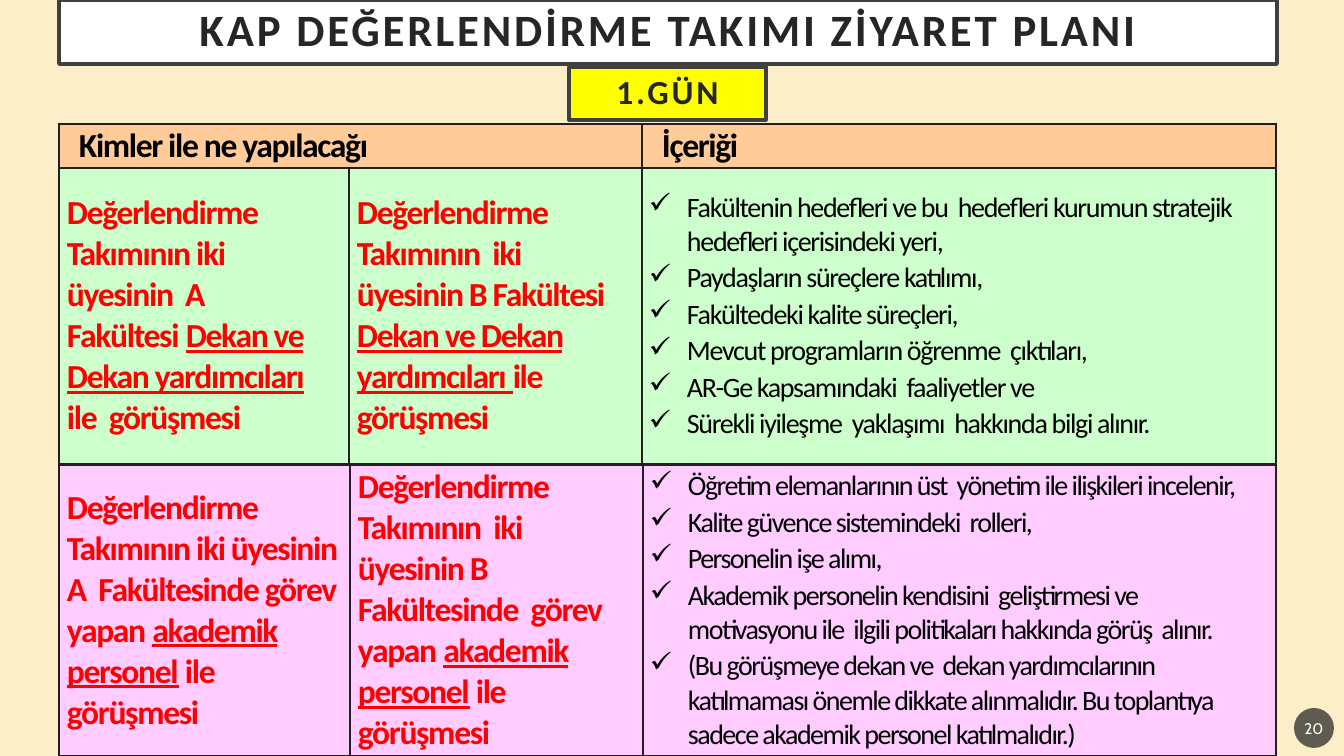
"""Builds the first-day visit plan slide of the evaluation team."""
from dataclasses import dataclass

from lxml import etree
from pptx import Presentation
from pptx.dml.color import RGBColor
from pptx.enum.shapes import MSO_SHAPE
from pptx.enum.text import MSO_ANCHOR, MSO_AUTO_SIZE, PP_ALIGN
from pptx.oxml.ns import qn
from pptx.util import Pt

EMU_PER_PX = 914400 / 100.8
RECT, OVAL = MSO_SHAPE.RECTANGLE, MSO_SHAPE.OVAL
MIDDLE, CENTER = MSO_ANCHOR.MIDDLE, PP_ALIGN.CENTER
NO_FIT = MSO_AUTO_SIZE.NONE
TITLE_ONLY = 5


@dataclass(frozen=True)
class Theme:
    font: str = "Calibri"
    number_font: str = "Cabin"
    page: str = "FBEEC9"
    white: str = "FFFFFF"
    yellow: str = "FFFF00"
    frame: str = "404040"
    heading: str = "262626"
    badge: str = "1D1D1D"
    grid: str = "231F20"
    black: str = "000000"
    red: str = "FF0000"
    orange: str = "FFCC99"
    green: str = "CCFFCC"
    pink: str = "FFCCFF"
    title_size: int = 32
    label_size: int = 24
    list_size: int = 20
    number_size: int = 11
    wide: int = 200
    tight: int = -95
    tighter: int = -110


def px(n):
    return round(n * EMU_PER_PX)


def rgb(code):
    return RGBColor.from_string(code)


class SlideBuilder:
    """Holds the theme and the current slide."""

    def __init__(self, prs, theme):
        self.theme = theme
        self.slide = prs.slides.add_slide(prs.slide_layouts[TITLE_ONLY])
        self.slide.background.fill.solid()
        self.slide.background.fill.fore_color.rgb = rgb(theme.page)

    def style(self, p, size, color, bold=True, spacing=0, font=None):
        for r in p.runs:
            r.font.name = font or self.theme.font
            r.font.size = Pt(size)
            r.font.bold = bold
            r.font.color.rgb = rgb(color)
            r._r.get_or_add_rPr().set("spc", str(spacing))

    def center(self, sp, text):
        tf = sp.text_frame
        tf.text = text
        tf.word_wrap = True
        tf.auto_size = NO_FIT
        tf.vertical_anchor = MIDDLE
        tf.margin_left = tf.margin_right = px(2)
        tf.margin_top = tf.margin_bottom = 0
        p = tf.paragraphs[0]
        p.alignment = CENTER
        return p

    def banner(self, sp, box, text, fill, size):
        sp.left, sp.top, sp.width, sp.height = map(px, box)
        sp.fill.solid()
        sp.fill.fore_color.rgb = rgb(fill)
        sp.line.color.rgb = rgb(self.theme.frame)
        sp.line.width = Pt(2.5)
        p = self.center(sp, text)
        p.line_spacing = 0.9
        self.style(p, size, self.theme.heading, spacing=self.theme.wide)

    def title(self, box, text):
        self.banner(self.slide.shapes.title, box, text, self.theme.white, self.theme.title_size)

    def shape(self, kind, box):
        sp = self.slide.shapes.add_shape(kind, *map(px, box))
        sp.shadow.inherit = False
        return sp

    def day_label(self, box, text):
        self.banner(self.shape(RECT, box), box, text, self.theme.yellow, self.theme.label_size)

    def page_number(self, box, text):
        sp = self.shape(OVAL, box)
        sp.fill.solid()
        sp.fill.fore_color.rgb = rgb(self.theme.badge)
        color = sp._element.spPr.find(".//" + qn("a:srgbClr"))
        etree.SubElement(color, qn("a:alpha"), val="70000")
        sp.line.fill.background()
        self.style(self.center(sp, text), self.theme.number_size, self.theme.white,
                   bold=False, font=self.theme.number_font)

    def table(self, left, top, height, widths, fill):
        frame = self.slide.shapes.add_table(
            1, len(widths), px(left), px(top), px(sum(widths)), px(height))
        table = frame.table
        table.first_row = table.horz_banding = False
        table.rows[0].height = px(height)
        for column, width in zip(table.columns, widths):
            column.width = px(width)
        for cell in table.iter_cells():
            self.grid(cell)
            cell.fill.solid()
            cell.fill.fore_color.rgb = rgb(fill)
            cell.vertical_anchor = MIDDLE
            cell.margin_top = cell.margin_bottom = 0
        return list(table.iter_cells())

    def grid(self, cell):
        tc_pr = cell._tc.get_or_add_tcPr()
        for side in ("a:lnL", "a:lnR", "a:lnT", "a:lnB"):
            ln = etree.SubElement(tc_pr, qn(side), w=str(Pt(1)))
            fill = etree.SubElement(ln, qn("a:solidFill"))
            etree.SubElement(fill, qn("a:srgbClr"), val=self.theme.grid)

    def label(self, cell, paragraphs, color, left, right=0):
        """Writes bold paragraphs; parts between underscores are underlined."""
        cell.margin_left, cell.margin_right = px(left), px(right)
        tf = cell.text_frame
        for i, text in enumerate(paragraphs):
            p = tf.add_paragraph() if i else tf.paragraphs[0]
            for j, part in enumerate(text.split("_")):
                if part:
                    r = p.add_run()
                    r.text = part
                    r.font.underline = j % 2 == 1
            self.style(p, self.theme.label_size, color, spacing=self.theme.tight)

    def checklist(self, cell, items, spacing, right):
        cell.margin_left, cell.margin_right = 0, px(right)
        tf = cell.text_frame
        tf.text = "\n".join(items)
        for p in tf.paragraphs:
            p.space_before = Pt(1.6)
            p_pr = p._p.get_or_add_pPr()
            p_pr.set("marL", str(px(45)))
            p_pr.set("indent", str(px(-38)))
            etree.SubElement(p_pr, qn("a:buChar"), char="✓")
            self.style(p, self.theme.list_size, self.theme.black, False, spacing)


HEADERS = ["Kimler ile ne yapılacağı", "İçeriği"]
DEANS_A = ["Değerlendirme Takımının iki üyesinin  A Fakültesi _Dekan ve Dekan yardımcıları_",
           "ile  görüşmesi"]
DEANS_B = ["Değerlendirme Takımının  iki üyesinin B Fakültesi "
           "_Dekan ve Dekan yardımcıları _ile görüşmesi"]
STAFF_A = ["Değerlendirme Takımının iki üyesinin",
           "A  Fakültesinde görev yapan _akademik personel_ ile görüşmesi"]
STAFF_B = ["Değerlendirme Takımının  iki üyesinin B Fakültesinde  görev yapan "
           "_akademik personel_ ile görüşmesi"]
DEAN_TOPICS = [
    "Fakültenin hedefleri ve bu  hedefleri kurumun stratejik hedefleri içerisindeki yeri,",
    "Paydaşların süreçlere katılımı,",
    "Fakültedeki kalite süreçleri,",
    "Mevcut programların öğrenme  çıktıları,",
    "AR-Ge kapsamındaki  faaliyetler ve",
    "Sürekli iyileşme  yaklaşımı  hakkında bilgi alınır.",
]
STAFF_TOPICS = [
    "Öğretim elemanlarının üst  yönetim ile ilişkileri incelenir,",
    "Kalite güvence sistemindeki  rolleri,",
    "Personelin işe alımı,",
    "Akademik personelin kendisini  geliştirmesi ve motivasyonu ile  ilgili politikaları "
    "hakkında görüş  alınır.",
    "(Bu görüşmeye dekan ve  dekan yardımcılarının katılmaması önemle dikkate alınmalıdır. "
    "Bu toplantıya sadece akademik personel katılmalıdır.)",
]


def main():
    prs = Presentation()
    prs.slide_width, prs.slide_height = px(1344), px(756)
    theme = Theme()
    b = SlideBuilder(prs, theme)
    b.page_number((1294, 708, 40, 40), "20")
    b.title((59, 0, 1218, 64), "KAP DEĞERLENDİRME TAKIMI ZİYARET PLANI")

    for cell, text in zip(b.table(59, 124, 44, (583, 634), theme.orange), HEADERS):
        b.label(cell, [text], theme.black, 20)

    meetings = [
        (168, 296, (290, 293, 634), theme.green, (DEANS_A, 30), (DEANS_B, 20),
         (DEAN_TOPICS, theme.tight, 5)),
        (465, 291, (291, 293, 633), theme.pink, (STAFF_A, 5), (STAFF_B, 20),
         (STAFF_TOPICS, theme.tighter, 20)),
    ]
    for top, height, widths, fill, team_a, team_b, topics in meetings:
        cells = b.table(59, top, height, widths, fill)
        for cell, (text, right) in zip(cells, (team_a, team_b)):
            b.label(cell, text, theme.red, 8, right)
        b.checklist(cells[2], *topics)

    b.day_label((569, 67, 197, 53), "1.GÜN")
    prs.save("out.pptx")


if __name__ == "__main__":
    main()
